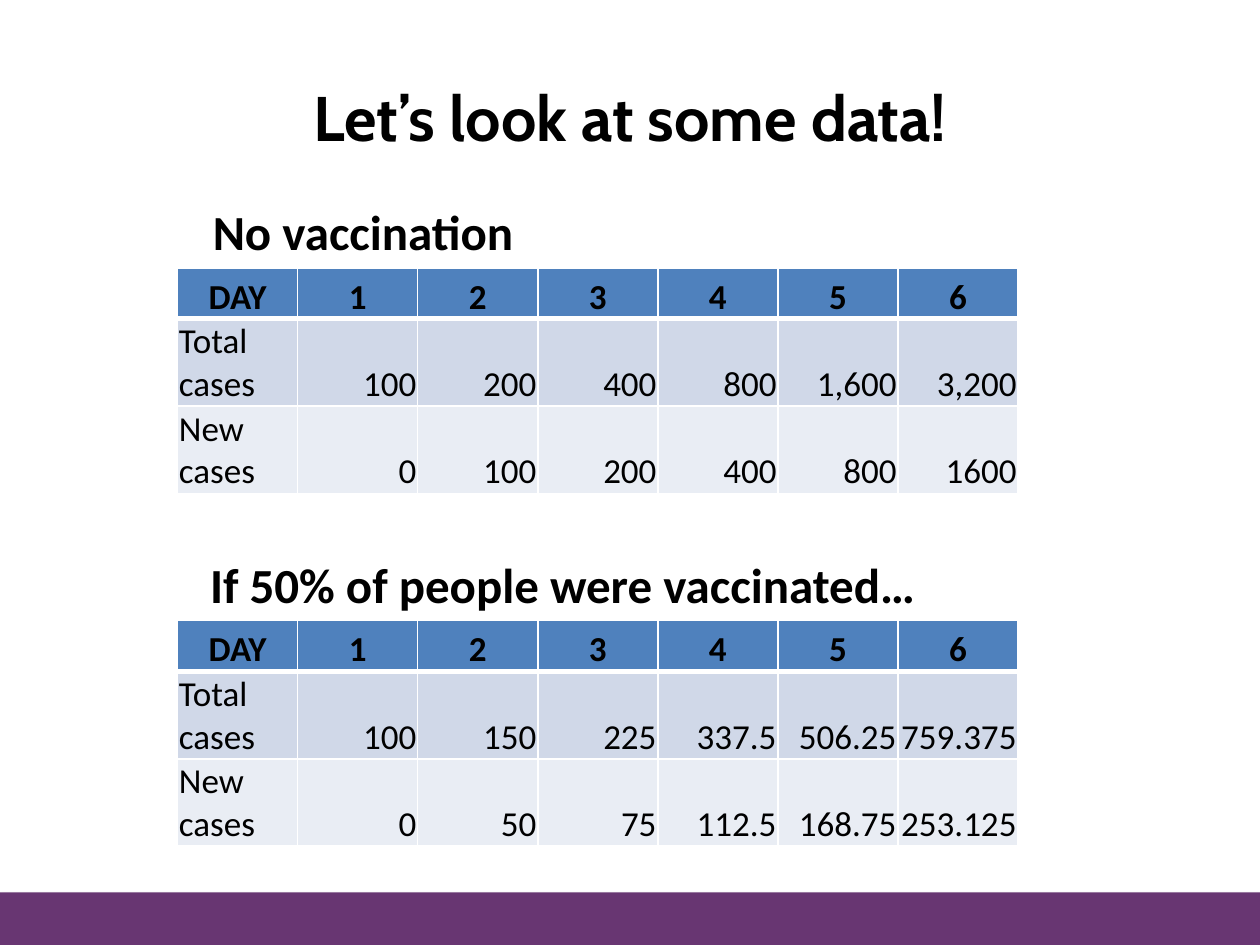
from pptx import Presentation
from pptx.util import Pt
from pptx.dml.color import RGBColor
from pptx.enum.shapes import MSO_SHAPE
from pptx.enum.text import MSO_ANCHOR, MSO_AUTO_SIZE, PP_ALIGN
from pptx.oxml import parse_xml
from pptx.oxml.ns import nsdecls

HUES = {"text": "000000", "bar": "683672", "edge": "FFFFFF",
        "rows": ["4F81BD", "D0D8E8", "E9EDF4"]}
TITLE = "Let’s look at some data!"
DAYS = ["DAY", "1", "2", "3", "4", "5", "6"]
PARTS = [
    {"head": "No vaccination", "left": 114.5, "top": 111.6, "wide": 188.6,
     "rows": [DAYS,
              ["Total\ncases", "100", "200", "400", "800", "1,600", "3,200"],
              ["New cases", "0", "100", "200", "400", "800", "1600"]]},
    {"head": "If 50% of people were vaccinated…", "left": 113, "top": 313.2, "wide": 432,
     "rows": [DAYS,
              ["Total\ncases", "100", "150", "225", "337.5", "506.25", "759.375"],
              ["New cases", "0", "50", "75", "112.5", "168.75", "253.125"]]},
]
WIDE, HIGH = 720, 540
LEFT, COL, DROP = 101.5, 68.6, 41.4
TALL = [29, 50, 50]


def write(frame, text, size=20, font="Calibri", bold=False, align=PP_ALIGN.LEFT):
    frame.text = text
    for para in frame.paragraphs:
        para.alignment = align
        for run in para.runs:
            run.font.size = Pt(size)
            run.font.name = font
            run.font.bold = bold
            run.font.color.rgb = RGBColor.from_string(HUES["text"])


def edge(cell, base):
    props = cell._tc.get_or_add_tcPr()
    for spot, (side, width) in enumerate([("L", 1), ("R", 1), ("T", 1), ("B", base)]):
        props.insert(spot, parse_xml(
            f'<a:ln{side} {nsdecls("a")} w="{Pt(width)}"><a:solidFill>'
            f'<a:srgbClr val="{HUES["edge"]}"/></a:solidFill></a:ln{side}>'))


def grid(slide, rows, top):
    table = slide.shapes.add_table(len(rows), len(DAYS), Pt(LEFT), Pt(top),
                                   Pt(COL * len(DAYS)), Pt(sum(TALL))).table
    for col in table.columns:
        col.width = Pt(COL)
    for r, row in enumerate(rows):
        table.rows[r].height = Pt(TALL[r])
        for c, text in enumerate(row):
            cell = table.cell(r, c)
            cell.margin_left = cell.margin_right = cell.margin_top = Pt(0.75)
            cell.margin_bottom = 0
            cell.vertical_anchor = MSO_ANCHOR.BOTTOM
            cell.fill.solid()
            cell.fill.fore_color.rgb = RGBColor.from_string(HUES["rows"][r])
            side = PP_ALIGN.RIGHT if c else PP_ALIGN.LEFT
            write(cell.text_frame, text, bold=r == 0,
                  align=side if r else PP_ALIGN.CENTER)
            edge(cell, 1 if r else 3)


def main():
    deck = Presentation()
    deck.slide_width, deck.slide_height = Pt(WIDE), Pt(HIGH)
    slide = deck.slides.add_slide(deck.slide_layouts[5])

    bar = slide.shapes.add_shape(MSO_SHAPE.RECTANGLE, 0, Pt(510), Pt(WIDE), Pt(30))
    bar.fill.solid()
    bar.fill.fore_color.rgb = RGBColor.from_string(HUES["bar"])
    bar.line.fill.background()
    bar.shadow.inherit = False
    bar._element.spPr.find("{*}effectLst").append(parse_xml(
        f'<a:outerShdw {nsdecls("a")} blurRad="{Pt(3.1)}" dist="{Pt(1.8)}" '
        'dir="5400000" rotWithShape="0"><a:srgbClr val="000000">'
        '<a:alpha val="35000"/></a:srgbClr></a:outerShdw>'))

    for part in PARTS:
        grid(slide, part["rows"], part["top"] + DROP)
        box = slide.shapes.add_textbox(Pt(part["left"]), Pt(part["top"]),
                                       Pt(part["wide"]), Pt(41))
        write(box.text_frame, part["head"], size=28, bold=True)
        box.text_frame.word_wrap = False
        box.text_frame.auto_size = MSO_AUTO_SIZE.SHAPE_TO_FIT_TEXT

    title = slide.shapes.title
    title.left, title.top, title.width, title.height = Pt(36), Pt(21.6), Pt(648), Pt(90)
    title.text_frame.vertical_anchor = MSO_ANCHOR.MIDDLE
    write(title.text_frame, TITLE, size=36, font="Cabin", bold=True, align=PP_ALIGN.CENTER)
    deck.save("out.pptx")


if __name__ == "__main__":
    main()
